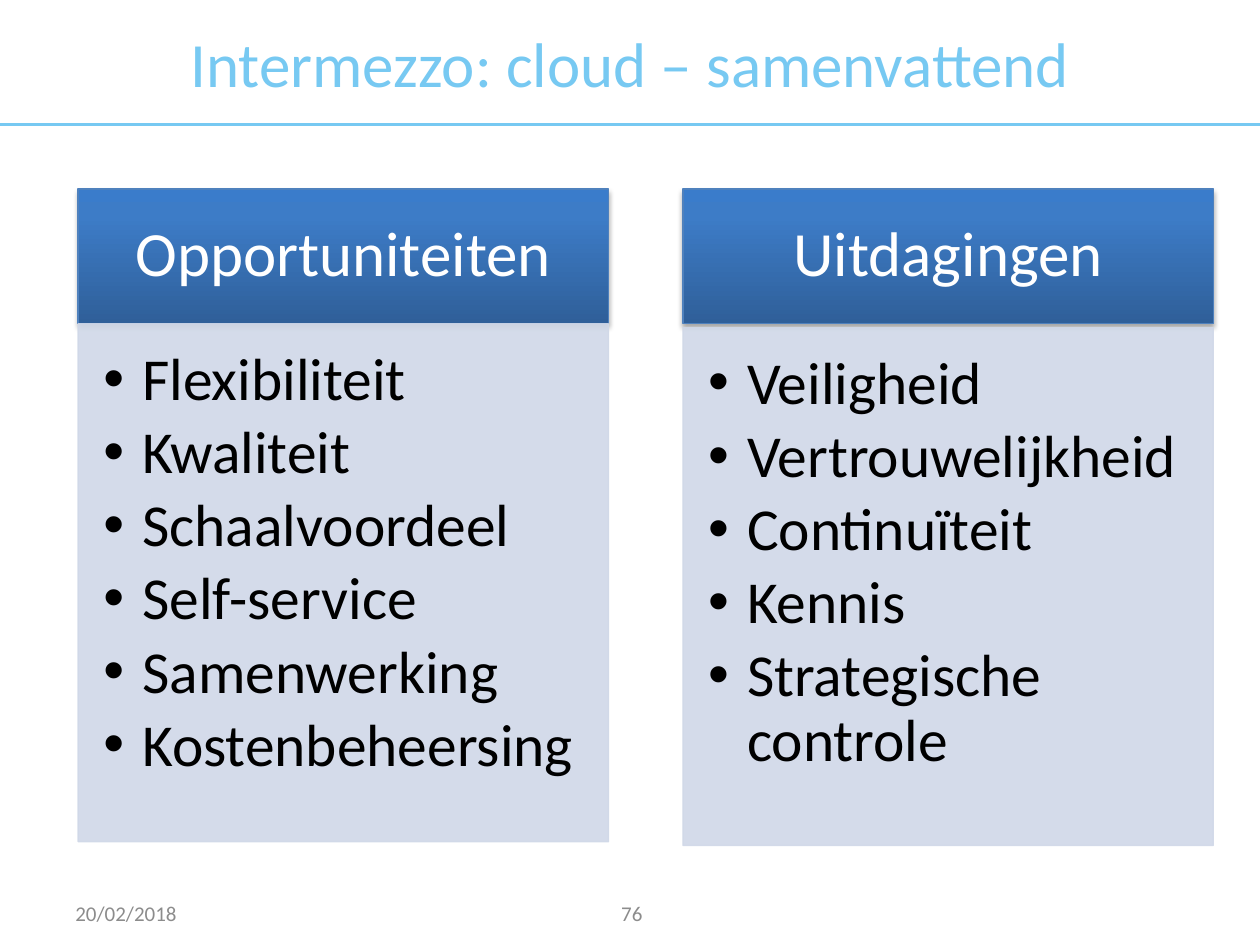
from lxml.etree import SubElement as Sub
from pptx import Presentation
from pptx.dml.color import RGBColor as Rgb
from pptx.enum.shapes import MSO_CONNECTOR as Conn, MSO_SHAPE as Form
from pptx.enum.text import MSO_ANCHOR as Anchor, MSO_AUTO_SIZE as Auto, PP_ALIGN as Align
from pptx.oxml.ns import qn
from pptx.util import Inches, Pt

HUES = {"sky": "77C9F2", "gray": "8C8C8C", "white": "FFFFFF", "black": "000000",
        "edge": "4F81BD", "pale": "D0D8E8",
        "deep": "2F5F99", "mid": "3D7CC7", "top": "3A7CCB"}


def node(up, tag, **attrs):
    return Sub(up, qn(tag), {key: str(val) for key, val in attrs.items()})


def tint(up, hue, alpha=100):
    color = node(up, "a:srgbClr", val=HUES[hue])
    if alpha < 100:
        node(color, "a:alpha", val=alpha * 1000)


def write(frame, *lines, size=12, hue="black", align=Align.LEFT, anchor=Anchor.MIDDLE,
          pads=(0.1, 0.05, 0.1, 0.05), lead=None, after=0, hang=0):
    frame.word_wrap = True
    frame.auto_size = Auto.NONE
    frame.vertical_anchor = anchor
    (frame.margin_left, frame.margin_top,
     frame.margin_right, frame.margin_bottom) = map(Inches, pads)
    for i, line in enumerate(lines):
        para = frame.add_paragraph() if i else frame.paragraphs[0]
        para.alignment, para.line_spacing = align, lead
        para.space_before, para.space_after = Pt(0), Pt(after)
        run = para.add_run()
        run.text = line
        run.font.name, run.font.size = "Calibri", Pt(size)
        run.font.color.rgb = Rgb.from_string(HUES[hue])
        if hang:
            props = para._p.get_or_add_pPr()
            props.set("marL", str(Inches(hang)))
            props.set("indent", str(-Inches(hang)))
            node(props, "a:buFont", typeface="Arial")
            node(props, "a:buChar", char="•")


class Deck:
    """Holds the style and the current slide, with boxes in percent of its size."""

    def __init__(self):
        self.show = Presentation()
        self.show.slide_width, self.show.slide_height = Inches(10), Inches(7.5)
        self.slide = self.show.slides.add_slide(self.show.slide_layouts[5])

    def box(self, x, y, w, h):
        wide, high = self.show.slide_width, self.show.slide_height
        return [round(part * full / 100)
                for part, full in zip((x, y, w, h), (wide, high, wide, high))]

    def title(self, text, *box):
        head = self.slide.shapes.title
        head.left, head.top, head.width, head.height = self.box(*box)
        write(head.text_frame, text, size=36, hue="sky", align=Align.CENTER)

    def rule(self, y):
        x, y, w, _ = self.box(0, y, 100, 0)
        line = self.slide.shapes.add_connector(Conn.STRAIGHT, x, y, x + w, y)
        line.line.color.rgb = Rgb.from_string(HUES["sky"])
        line.line.width = Pt(1.5)
        node(line._element.spPr, "a:effectLst")

    def note(self, text, *box, align=Align.LEFT):
        area = self.slide.shapes.add_textbox(*self.box(*box))
        write(area.text_frame, text, hue="gray", align=align)

    def panel(self, box, hue):
        form = self.slide.shapes.add_shape(Form.RECTANGLE, *self.box(*box))
        form.shadow.inherit = False
        form.fill.solid()
        form.fill.fore_color.rgb = form.line.color.rgb = Rgb.from_string(HUES[hue])
        form.line.width = Pt(0.75)
        return form

    def header(self, text, *box):
        form = self.panel(box, "edge")
        props = form._element.spPr
        grad = node(props, "a:gradFill", rotWithShape=1)
        props.replace(props.find(qn("a:solidFill")), grad)
        stops = node(grad, "a:gsLst")
        for pos, hue in ((0, "deep"), (80, "mid"), (100, "top")):
            tint(node(stops, "a:gs", pos=pos * 1000), hue)
        node(grad, "a:lin", ang=270 * 60000, scaled=0)
        shade = node(props.find(qn("a:effectLst")), "a:outerShdw", blurRad=Pt(3.1),
                     dist=Pt(1.8), dir=90 * 60000, rotWithShape=0)
        tint(shade, "black", 35)
        write(form.text_frame, text, size=36, hue="white", align=Align.CENTER,
              pads=(0.28, 0.16, 0.28, 0.16), lead=0.9)

    def bullets(self, items, *box):
        form = self.panel(box, "pale")
        for color in form._element.spPr.iter(qn("a:srgbClr")):
            node(color, "a:alpha", val=90000)
        write(form.text_frame, *items, size=34, anchor=Anchor.TOP,
              pads=(0.2, 0.2, 0.26, 0.3), lead=0.9, after=5.1, hang=0.31)


def main():
    deck = Deck()
    deck.rule(13.2)
    deck.title("Intermezzo: cloud – samenvattend", 0, 0, 100, 13.2)
    lists = (
        ("Opportuniteiten", 6.2, 34.27,
         ("Flexibiliteit", "Kwaliteit", "Schaalvoordeel", "Self-service",
          "Samenwerking", "Kostenbeheersing")),
        ("Uitdagingen", 54.2, 34.67,
         ("Veiligheid", "Vertrouwelijkheid", "Continuïteit", "Kennis",
          "Strategische controle")),
    )
    for name, x, y, items in lists:
        deck.header(name, x, 20, 42.1, 14.27)
        deck.bullets(items, x, y, 42.1, 54.8)
    deck.note("20/02/2018", 5, 94, 23.3, 5.33)
    deck.note("76", 38.5, 94, 23.3, 5.33, align=Align.CENTER)
    deck.show.save("out.pptx")


if __name__ == "__main__":
    main()
